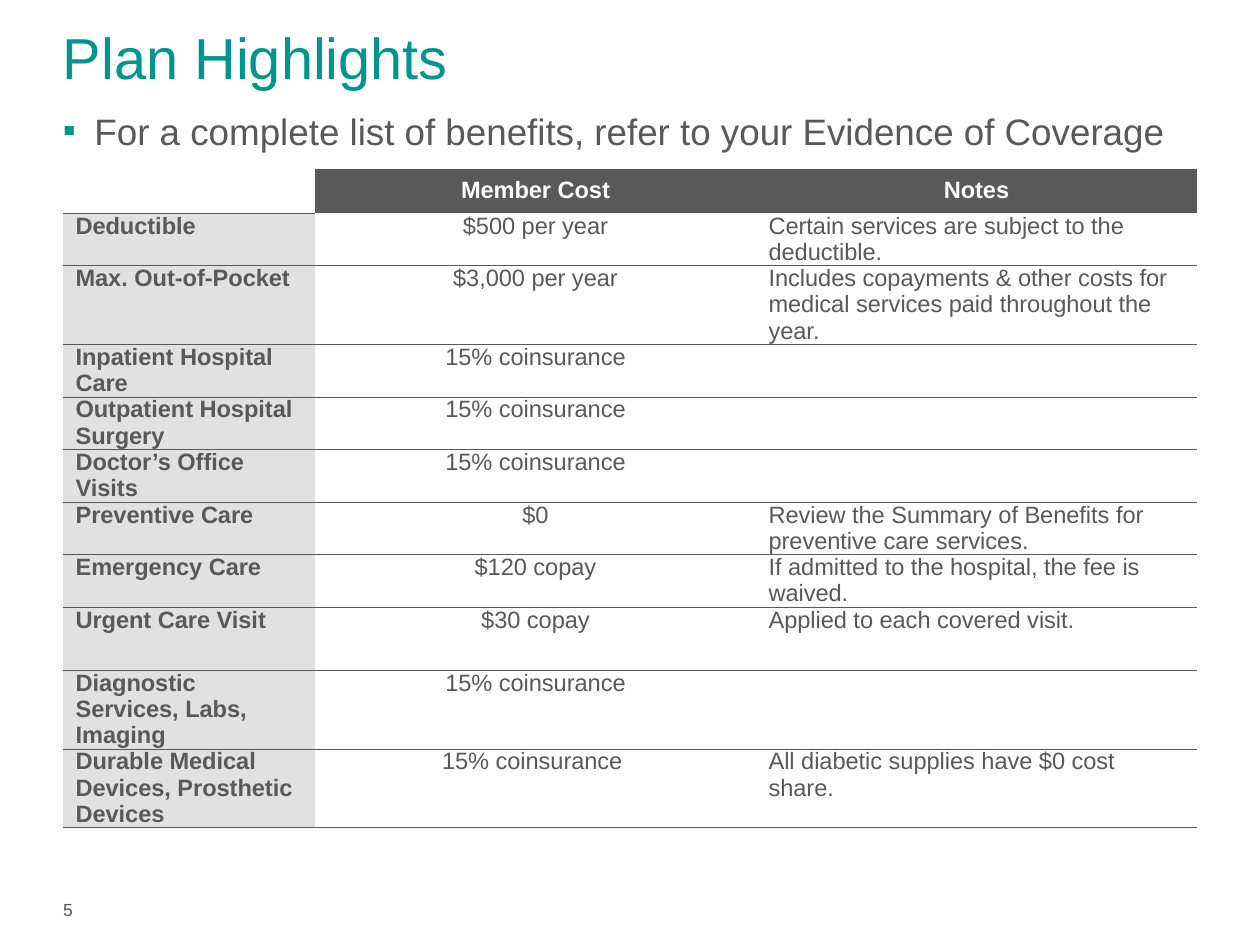
from lxml import etree
from pptx import Presentation
from pptx.dml.color import RGBColor
from pptx.enum import text
from pptx.oxml import ns
from pptx.util import Inches, Pt

TEAL = RGBColor(0x00, 0x96, 0x8F)
GRAY = RGBColor(0x59, 0x59, 0x59)
PALE = RGBColor(0xE1, 0xE1, 0xE1)
WHITE = RGBColor(0xFF, 0xFF, 0xFF)
FONT = "Arial"
LEFT = Inches(0.5)

SHARE = "15% coinsurance"
PLAN = [
    ("", "Member Cost", "Notes"),
    ("Deductible", "$500 per year", "Certain services are subject to the deductible."),
    ("Max. Out-of-Pocket", "$3,000 per year",
     "Includes copayments & other costs for medical services paid throughout the year."),
    ("Inpatient Hospital Care", SHARE, ""),
    ("Outpatient Hospital Surgery", SHARE, ""),
    ("Doctor’s Office Visits", SHARE, ""),
    ("Preventive Care", "$0",
     "Review the Summary of Benefits for preventive care services."),
    ("Emergency Care", "$120 copay", "If admitted to the hospital, the fee is waived."),
    ("Urgent Care Visit", "$30 copay", "Applied to each covered visit."),
    ("Diagnostic Services, Labs, Imaging", SHARE, ""),
    ("Durable Medical Devices, Prosthetic Devices", SHARE + " ",
     "All diabetic supplies have $0 cost share."),
]
WIDTHS = [2, 3.5, 3.5]
HEIGHTS = [0.35] + [0.38] * 7 + [0.5, 0.6, 0.5]


def style(para, size, color, bold=False):
    for run in para.runs:
        font = run.font
        font.name, font.size, font.bold = FONT, Pt(size), bold
        font.color.rgb = color


def add_text(slide, words, top, width, height, size, color,
             anchor=text.MSO_ANCHOR.MIDDLE):
    box = slide.shapes.add_textbox(LEFT, Inches(top), Inches(width), Inches(height))
    frame = box.text_frame
    frame.word_wrap = True
    frame.margin_left = frame.margin_right = 0
    frame.margin_top = frame.margin_bottom = 0
    frame.vertical_anchor = anchor
    frame.text = words
    para = frame.paragraphs[0]
    style(para, size, color)
    return para


def add_bullet(para, mark, color, indent):
    props = para._p.get_or_add_pPr()
    props.set("marL", str(indent))
    props.set("indent", str(-indent))
    tint = etree.SubElement(props, ns.qn("a:buClr"))
    etree.SubElement(tint, ns.qn("a:srgbClr"), val=str(color))
    etree.SubElement(props, ns.qn("a:buFont"), typeface=FONT)
    etree.SubElement(props, ns.qn("a:buChar"), char=mark)


def set_edges(cell, top, bottom):
    """Rule the top and bottom at widths in points; None leaves an edge bare."""
    props = cell._tc.get_or_add_tcPr()
    for side, width in (("L", None), ("R", None), ("T", top), ("B", bottom)):
        line = etree.SubElement(props, ns.qn("a:ln" + side))
        if width is None:
            etree.SubElement(line, ns.qn("a:noFill"))
        else:
            line.set("w", str(Pt(width)))
            fill = etree.SubElement(line, ns.qn("a:solidFill"))
            etree.SubElement(fill, ns.qn("a:srgbClr"), val=str(GRAY))


def fill_cell(cell, words, row, col):
    head, label = row == 0, col == 0
    cell.margin_left = cell.margin_right = Inches(0.1)
    cell.margin_top = cell.margin_bottom = 0
    if head:
        cell.vertical_anchor = text.MSO_ANCHOR.MIDDLE
    rule = 0.5 if label else None
    if head:
        set_edges(cell, None, rule)
    else:
        set_edges(cell, rule if row == 1 else 0.25, 0.25)
    if label != head:
        cell.fill.solid()
        cell.fill.fore_color.rgb = GRAY if head else PALE
    else:
        cell.fill.background()
    if words:
        cell.text_frame.text = words
        para = cell.text_frame.paragraphs[0]
        para.line_spacing = Pt(15)
        if head or col == 1:
            para.alignment = text.PP_ALIGN.CENTER
        style(para, 13.5, WHITE if head else GRAY, head or label)


def add_plan(slide):
    frame = slide.shapes.add_table(
        len(PLAN), len(WIDTHS), LEFT, Inches(1.34),
        Inches(sum(WIDTHS)), Inches(sum(HEIGHTS)))
    table = frame.table
    table.first_row = table.horz_banding = False
    for column, width in zip(table.columns, WIDTHS):
        column.width = Inches(width)
    for row, height in zip(table.rows, HEIGHTS):
        row.height = Inches(height)
    for r, line in enumerate(PLAN):
        for c, words in enumerate(line):
            fill_cell(table.cell(r, c), words, r, c)


def main():
    deck = Presentation()
    deck.slide_width, deck.slide_height = Inches(10), Inches(7.5)
    slide = deck.slides.add_slide(deck.slide_layouts[6])
    add_text(slide, "5", 7.09, 2.25, 0.25, 10, GRAY)
    lead = add_text(slide, "For a complete list of benefits, refer to your Evidence of Coverage",
                    0.86, 9, 0.56, 21, GRAY, text.MSO_ANCHOR.TOP)
    add_bullet(lead, "▪", TEAL, Inches(0.25))
    add_text(slide, "Plan Highlights", 0.17, 9, 0.56, 33, TEAL)
    add_plan(slide)
    deck.save("out.pptx")


if __name__ == "__main__":
    main()
